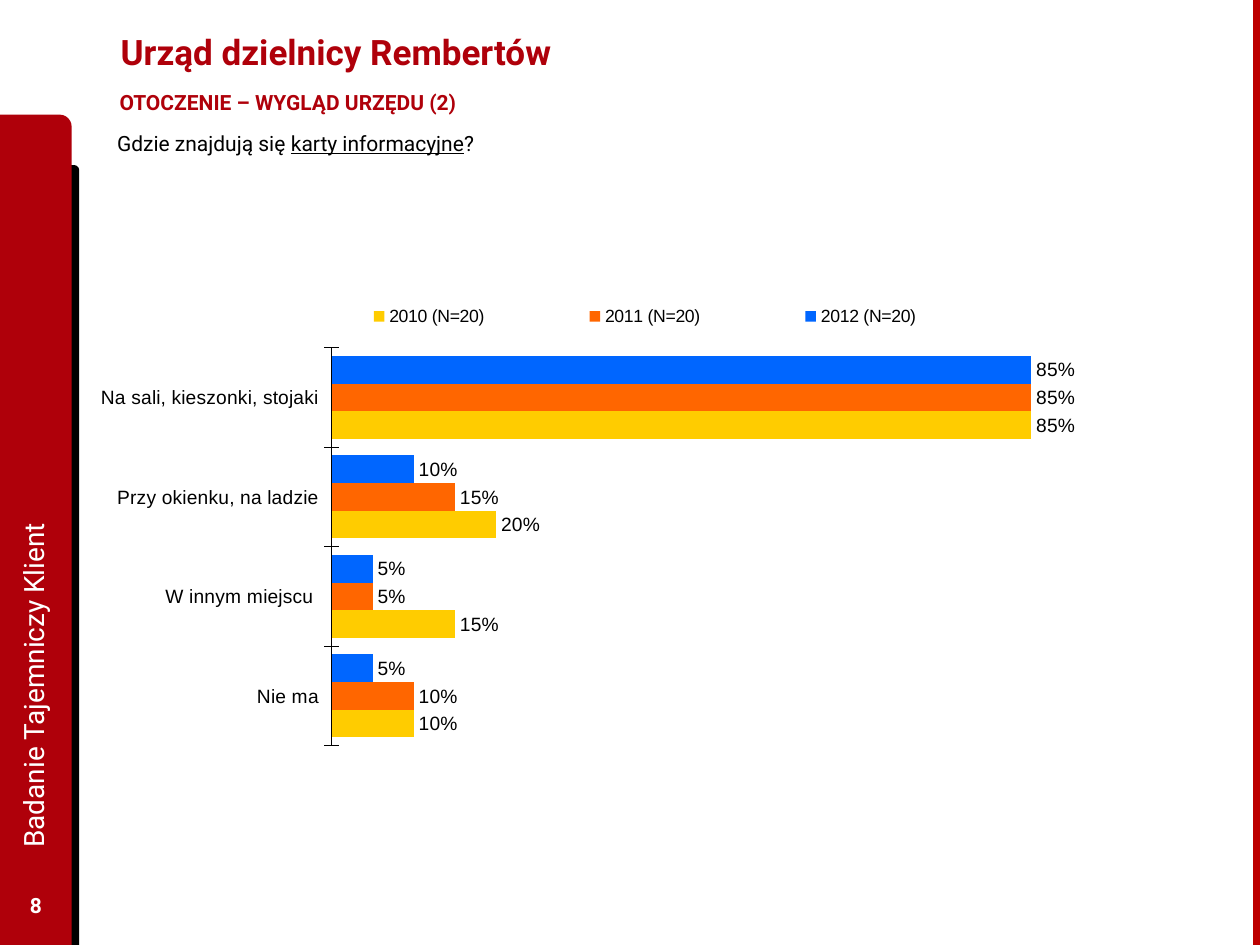
from lxml.etree import SubElement
from pptx import Presentation
from pptx.chart.data import CategoryChartData
from pptx.dml.color import RGBColor
from pptx.enum.chart import XL_CHART_TYPE as ChartType, XL_LABEL_POSITION as LabelPosition
from pptx.enum.chart import XL_LEGEND_POSITION as LegendPosition, XL_TICK_MARK as TickMark
from pptx.enum.shapes import MSO_SHAPE as Preset
from pptx.enum.text import MSO_ANCHOR as Anchor, PP_ALIGN as Align
from pptx.oxml.ns import qn
from pptx.util import Pt

RED, WHITE, BLACK = "AF000A", "FFFFFF", "000000"


def color(value):
    return RGBColor.from_string(value)


def set_layout(element, values, inner=False):
    layout = element.get_or_add_layout() if hasattr(element, "get_or_add_layout") else element.find(qn("c:layout"))
    if layout is None:
        layout = SubElement(element, qn("c:layout"))
        element.insert(0, layout)
    for child in list(layout):
        layout.remove(child)
    manual = SubElement(layout, qn("c:manualLayout"))
    settings = [("layoutTarget", "inner")] if inner else []
    settings += [("xMode", "edge"), ("yMode", "edge"), *zip("xywh", values)]
    for tag, value in settings:
        SubElement(manual, qn(f"c:{tag}")).set("val", str(value))


presentation = Presentation()
presentation.slide_width, presentation.slide_height = Pt(720), Pt(540)
slide = presentation.slides.add_slide(presentation.slide_layouts[6])

panels = [
    (Preset.ROUND_1_RECTANGLE, (28, 94.3, 17.3, 445.7), BLACK),
    (Preset.ROUND_1_RECTANGLE, (0, 65.5, 41, 474.5), RED),
    (Preset.RECTANGLE, (716, 0, 4, 540), "BD0000"),
]
for preset, box, fill in panels:
    shape = slide.shapes.add_shape(preset, *map(Pt, box))
    shape.shadow.inherit = False
    shape.fill.solid()
    shape.fill.fore_color.rgb = color(fill)
    shape.line.fill.background()

middle = {"vertical_anchor": Anchor.MIDDLE, "word_wrap": True}
top = {"vertical_anchor": Anchor.TOP, "word_wrap": True}
unwrapped = {"word_wrap": False, "margin_left": Pt(14.4), "margin_right": Pt(14.4)}
texts = [
    (["Urząd dzielnicy Rembertów"], (61.9, 3.6, 559.4, 51.8), 0, middle, Align.LEFT, 20, True, RED),
    (["Badanie Tajemniczy Klient"], (-188.6, 265.7, 414.7, 36.7), 270, middle, Align.LEFT, 16, False, WHITE),
    (["8"], (0, 502.6, 41, 28.8), 0, middle, Align.CENTER, 12, True, WHITE),
    (["OTOCZENIE – WYGLĄD URZĘDU (2)"], (54, 47.5, 277.2, 23.8), 0, unwrapped, Align.LEFT, 12, True, RED),
    (["Gdzie znajdują się ", "karty informacyjne", "?"], (59.8, 71.3, 442.8, 21.6), 0, top,
     Align.LEFT, 12, False, BLACK),
]
for runs, box, rotation, frame_format, alignment, size, bold, text_color in texts:
    shape = slide.shapes.add_textbox(*map(Pt, box))
    shape.rotation = rotation
    for name, value in frame_format.items():
        setattr(shape.text_frame, name, value)
    paragraph = shape.text_frame.paragraphs[0]
    paragraph.alignment = alignment
    for text in runs:
        run = paragraph.add_run()
        run.text = text
        font_format = {"name": "Roboto", "size": Pt(size), "bold": bold,
                       "underline": text == "karty informacyjne"}
        for name, value in font_format.items():
            setattr(run.font, name, value)
        run.font.color.rgb = color(text_color)

series_rows = [
    ("2012 (N=20)", (0.85, 0.1, 0.05, 0.05), "0066FF"),
    ("2011 (N=20)", (0.85, 0.15, 0.05, 0.1), "FF6600"),
    ("2010 (N=20)", (0.85, 0.2, 0.15, 0.1), "FFCC00"),
]
chart_data = CategoryChartData(number_format="0%")
chart_data.categories = ["Na sali, kieszonki, stojaki", "Przy okienku, na ladzie", "W innym miejscu ", "Nie ma"]
for name, values, fill in series_rows:
    chart_data.add_series(name, values)
chart = slide.shapes.add_chart(
    ChartType.BAR_CLUSTERED, *map(Pt, (57.6, 170.6, 653, 255.6)), chart_data).chart
chart.has_title = False
chart.has_legend = True
chart.legend.position = LegendPosition.TOP
chart.legend.include_in_layout = False

category_axis, value_axis = chart.category_axis, chart.value_axis
category_axis.reverse_order = True
category_axis.major_tick_mark = TickMark.CROSS
category_axis.format.line.width = Pt(0.25)
category_axis.format.line.color.rgb = color(BLACK)
axis_format = {"visible": False, "has_major_gridlines": False, "minimum_scale": 0, "maximum_scale": 0.9}
for name, value in axis_format.items():
    setattr(value_axis, name, value)

plot = chart.plots[0]
plot_format = {"gap_width": 60, "overlap": 0, "vary_by_categories": False, "has_data_labels": True}
for name, value in plot_format.items():
    setattr(plot, name, value)
labels = plot.data_labels
label_format = {"show_value": True, "number_format": "0%", "number_format_is_linked": False,
                "position": LabelPosition.OUTSIDE_END}
for name, value in label_format.items():
    setattr(labels, name, value)
for series, (name, values, fill) in zip(plot.series, series_rows):
    series.format.fill.solid()
    series.format.fill.fore_color.rgb = color(fill)

for part, size in [(chart, 11), (category_axis.tick_labels, 11), (labels, 11), (chart.legend, 10.1)]:
    part.font.name = "Arial"
    part.font.size = Pt(size)
    part.font.color.rgb = color(BLACK)

plot_area = chart.element.find(".//" + qn("c:plotArea"))
legend = chart.element.find(".//" + qn("c:legend"))
set_layout(plot_area, (0.2, 0.11, 0.65, 0.89), inner=True)
set_layout(legend, (0.15, 0, 0.65, 0.08))

presentation.save("out.pptx")
